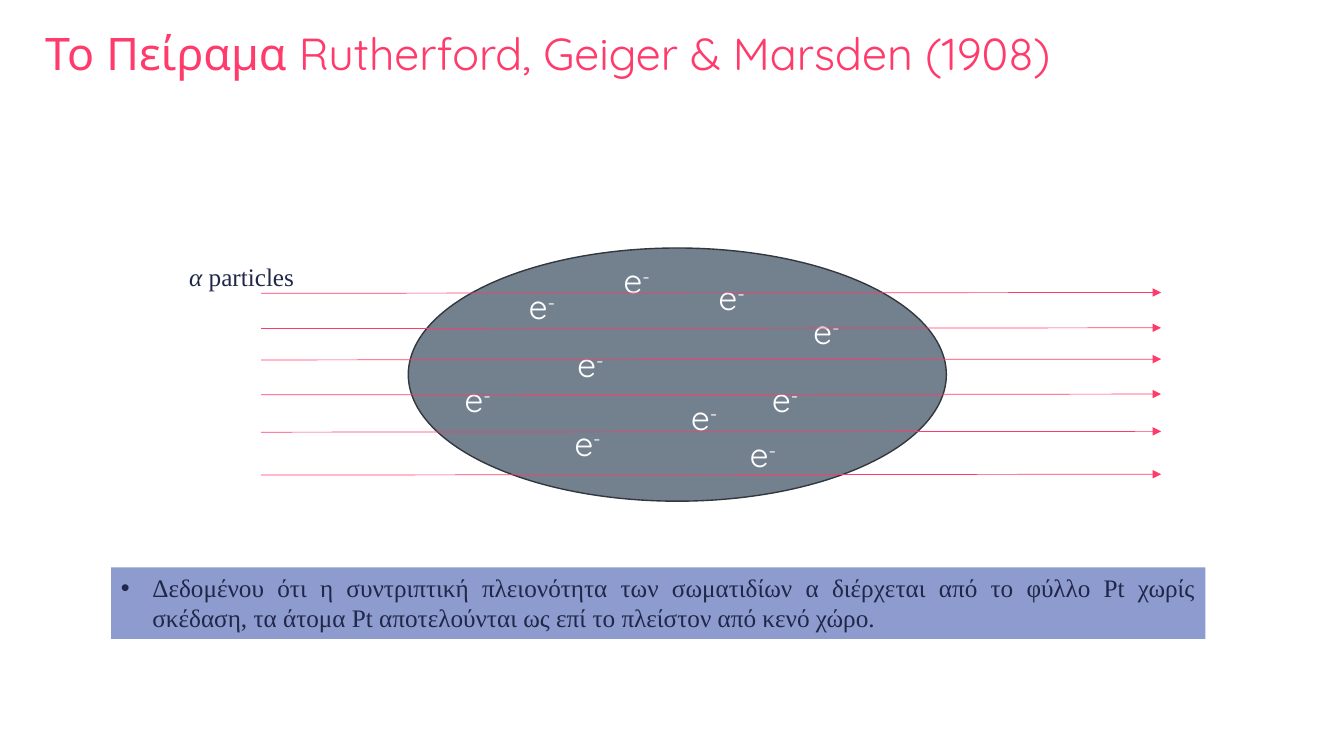
from lxml import etree
from pptx import Presentation
from pptx.dml.color import RGBColor
from pptx.enum.shapes import MSO_CONNECTOR as Connector, MSO_SHAPE as Shape
from pptx.enum.text import MSO_ANCHOR as Anchor, MSO_AUTO_SIZE as AutoSize, PP_ALIGN as Align
from pptx.oxml.ns import qn
from pptx.util import Cm, Pt

COLOURS = {"pink": "FF3B6B", "atom": "73808E", "rim": "32383E",
           "navy": "202849", "band": "8E9BCE", "white": "FFFFFF"}
FORMATS = {
    "title": {"name": "Quicksand", "size": Pt(32), "colour": "pink"},
    "electron": {"name": "Quicksand", "size": Pt(24), "colour": "white"},
    "body": {"name": "Times New Roman", "size": Pt(18), "colour": "navy"},
}
ELECTRONS = [(2.79, 0.84), (1.17, 3.18), (3.94, 4.27), (4.01, 2.29), (5.18, 0.18),
             (7.57, 0.61), (6.88, 3.63), (8.92, 3.18), (9.96, 1.47), (8.36, 4.57)]
BEAM_HEIGHTS = [1.14, 2.03, 2.82, 3.7, 4.64, 5.72]


def colour(name):
    """Return the named colour."""
    return RGBColor.from_string(COLOURS[name])


def add_span(para, text, style, **extra):
    """Append a run in the given style and return it."""
    span = para.add_run()
    span.text = text
    for key, value in {**FORMATS[style], **extra}.items():
        if key == "colour":
            span.font.color.rgb = colour(value)
        else:
            setattr(span.font, key, value)
    return span


def add_text_box(page, box, auto_size=AutoSize.SHAPE_TO_FIT_TEXT):
    """Add a wrapping text box and return it with its first paragraph."""
    text_box = page.shapes.add_textbox(*map(Cm, box))
    frame = text_box.text_frame
    frame.word_wrap = True
    frame.auto_size = auto_size
    return text_box, frame.paragraphs[0]


def add_title(page, box):
    """Place the slide title."""
    text_box, para = add_text_box(page, box, AutoSize.NONE)
    text_box.text_frame.vertical_anchor = Anchor.MIDDLE
    para.line_spacing = 0.9
    add_span(para, "Το Πείραμα Rutherford, Geiger & Marsden (1908)", "title")


def add_atom(page, box):
    """Draw the atom with its electrons."""
    left, top, width, height = box
    atom = page.shapes.add_shape(Shape.OVAL, *map(Cm, box))
    atom.shadow.inherit = False
    atom.fill.solid()
    atom.fill.fore_color.rgb = colour("atom")
    atom.line.color.rgb = colour("rim")
    atom.line.width = Pt(1)
    for across, down in ELECTRONS:
        para = add_text_box(page, (left + across, top + down, 1.63, 1.27))[1]
        add_span(para, "e", "electron")
        charge = add_span(para, "-", "electron")
        charge.font._element.set("baseline", "30000")


def add_beams(page, box):
    """Draw the alpha particle beams and their label."""
    left, top, width, height = box
    for down in BEAM_HEIGHTS:
        beam = page.shapes.add_connector(
            Connector.STRAIGHT, Cm(left + 2.06), Cm(top + down),
            Cm(left + width), Cm(top + down - 0.02))
        beam.line.color.rgb = colour("pink")
        beam.line.width = Pt(0.5)
        etree.SubElement(beam.line._get_or_add_ln(), qn("a:tailEnd"), type="triangle")
        etree.SubElement(beam._element.spPr, qn("a:effectLst"))
    para = add_text_box(page, (left, top + 0.2, 3.35, 1.02))[1]
    add_span(para, "α", "body", italic=True)
    add_span(para, " particles", "body", italic=False)


def add_conclusion(page, box):
    """Place the bulleted conclusion on its coloured band."""
    text_box, para = add_text_box(page, box)
    text_box.fill.solid()
    text_box.fill.fore_color.rgb = colour("band")
    para.alignment = Align.JUSTIFY
    props = para._p.get_or_add_pPr()
    props.set("marL", str(Cm(0.79)))
    props.set("indent", str(-Cm(0.79)))
    etree.SubElement(props, qn("a:buFont"), typeface="Arial")
    etree.SubElement(props, qn("a:buChar"), char="•")
    add_span(para, "Δεδομένου ότι η συντριπτική πλειονότητα των σωματιδίων α διέρχεται "
             "από το φύλλο Pt χωρίς σκέδαση, τα άτομα Pt αποτελούνται ως επί το "
             "πλείστον από κενό χώρο.", "body")


def main():
    """Build and save the deck."""
    deck = Presentation()
    deck.slide_width, deck.slide_height = Cm(33.87), Cm(19.05)
    page = deck.slides.add_slide(deck.slide_layouts[6])
    add_title(page, (0.89, 0.48, 29.21, 1.85))
    add_atom(page, (10.29, 6.25, 13.56, 6.38))
    add_beams(page, (4.52, 6.25, 24.74, 6.38))
    add_conclusion(page, (2.8, 14.3, 27.58, 1.8))
    deck.save("out.pptx")


if __name__ == "__main__":
    main()
